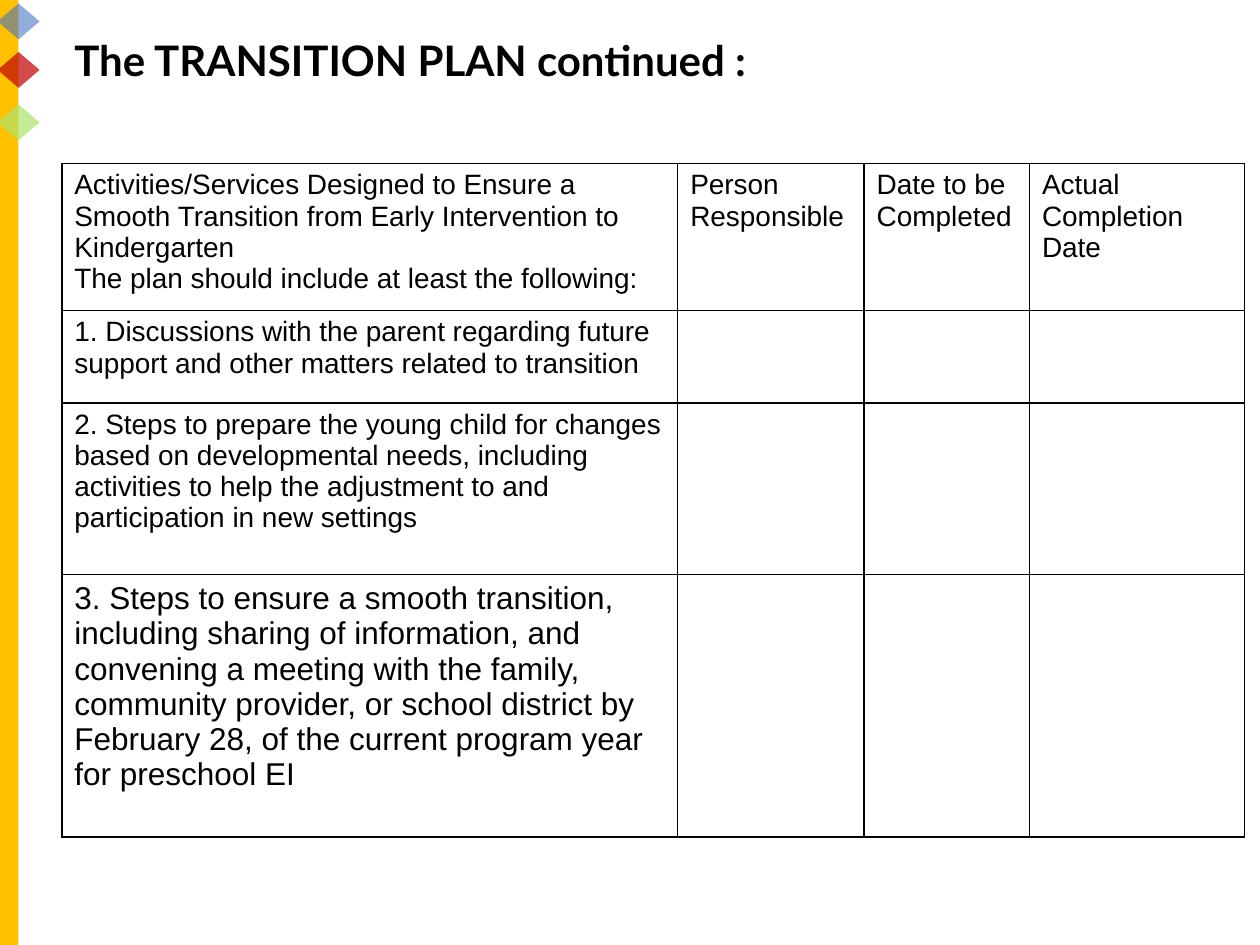
import pptx
import pptx.util
import pptx.dml.color
import pptx.enum.shapes
import pptx.enum.text
import pptx.oxml.ns
import lxml.etree

Pt = pptx.util.Pt
Shape = pptx.enum.shapes.MSO_SHAPE
COLOURS = {"bar": "FFC000", "blue": "4472C4", "red": "C00000", "green": "ABE46D", "ink": "000000"}
COLUMN_WIDTHS = [352, 106.5, 94.5, 123]
ROW_HEIGHTS = [84, 53, 98, 150]
HEADERS = [
    "Activities/Services Designed to Ensure a Smooth Transition from Early Intervention to Kindergarten\n"
    "The plan should include at least the following:",
    "Person Responsible",
    "Date to be Completed",
    "Actual Completion Date",
]
ACTIVITIES = [
    "1. Discussions with the parent regarding future support and other matters related to transition",
    "2. Steps to prepare the young child for changes based on developmental needs, including "
    "activities to help the adjustment to and participation in new settings",
    "3. Steps to ensure a smooth transition, including sharing of information, and convening a "
    "meeting with the family, community provider, or school district by February 28, of the "
    "current program year for preschool EI",
]


def colour(name):
    return pptx.dml.color.RGBColor.from_string(COLOURS[name])


def add_child(parent, tag, **attributes):
    return lxml.etree.SubElement(parent, pptx.oxml.ns.qn(tag), **attributes)


def style_font(font, name, size, bold=False):
    font.name = name
    font.size = Pt(size)
    font.bold = bold
    font.color.rgb = colour("ink")


def add_decoration(page, kind, left, top, width, height, fill, opacity=100):
    shape = page.shapes.add_shape(kind, Pt(left), Pt(top), Pt(width), Pt(height))
    shape.shadow.inherit = False
    shape.line.fill.background()
    shape.fill.solid()
    shape.fill.fore_color.rgb = colour(fill)
    if opacity < 100:
        tint = shape.fill._xPr.find(".//" + pptx.oxml.ns.qn("a:srgbClr"))
        add_child(tint, "a:alpha", val=str(opacity * 1000))


def set_title(page, text):
    title = page.shapes.title
    title.left, title.top, title.width, title.height = Pt(35.3), Pt(24.5), Pt(620.6), Pt(28)
    frame = title.text_frame
    frame.text = text
    frame.word_wrap = True
    frame.auto_size = pptx.enum.text.MSO_AUTO_SIZE.NONE
    frame.vertical_anchor = pptx.enum.text.MSO_ANCHOR.BOTTOM
    paragraph = frame.paragraphs[0]
    paragraph.alignment = pptx.enum.text.PP_ALIGN.LEFT
    paragraph.line_spacing = 0.9
    style_font(paragraph.font, "Lato", 24, True)


def add_borders(cell):
    properties = cell._tc.get_or_add_tcPr()
    for side in ("a:lnL", "a:lnR", "a:lnT", "a:lnB"):
        line = add_child(properties, side, w=str(Pt(1)))
        add_child(add_child(line, "a:solidFill"), "a:srgbClr", val=COLOURS["ink"])


def fill_cell(cell, text, size):
    add_borders(cell)
    cell.fill.background()
    cell.text = text
    for paragraph in cell.text_frame.paragraphs:
        style_font(paragraph.font, "Arial", size)


def add_plan_table(page):
    rows = [HEADERS] + [[activity, "", "", ""] for activity in ACTIVITIES]
    table = page.shapes.add_table(
        len(rows), len(HEADERS), Pt(35.3), Pt(93.4), Pt(sum(COLUMN_WIDTHS)), Pt(sum(ROW_HEIGHTS))
    ).table
    table.first_row = False
    table.horz_banding = False
    for column, width in zip(table.columns, COLUMN_WIDTHS):
        column.width = Pt(width)
    for row, height, texts, size in zip(table.rows, ROW_HEIGHTS, rows, [16, 16, 16, 18]):
        row.height = Pt(height)
        for cell, text in zip(row.cells, texts):
            fill_cell(cell, text, size)


def main():
    deck = pptx.Presentation()
    deck.slide_width, deck.slide_height = Pt(720), Pt(540)
    page = deck.slides.add_slide(deck.slide_layouts[5])
    add_decoration(page, Shape.RECTANGLE, 0, 0, 10.5, 540, "bar")
    for top, fill, opacity in [(2, "blue", 58), (29.7, "red", 70), (59.7, "green", 70)]:
        add_decoration(page, Shape.DIAMOND, -1.4, top, 24, 20.5, fill, opacity)
    set_title(page, "The TRANSITION PLAN continued :")
    add_plan_table(page)
    deck.save("out.pptx")


if __name__ == "__main__":
    main()
